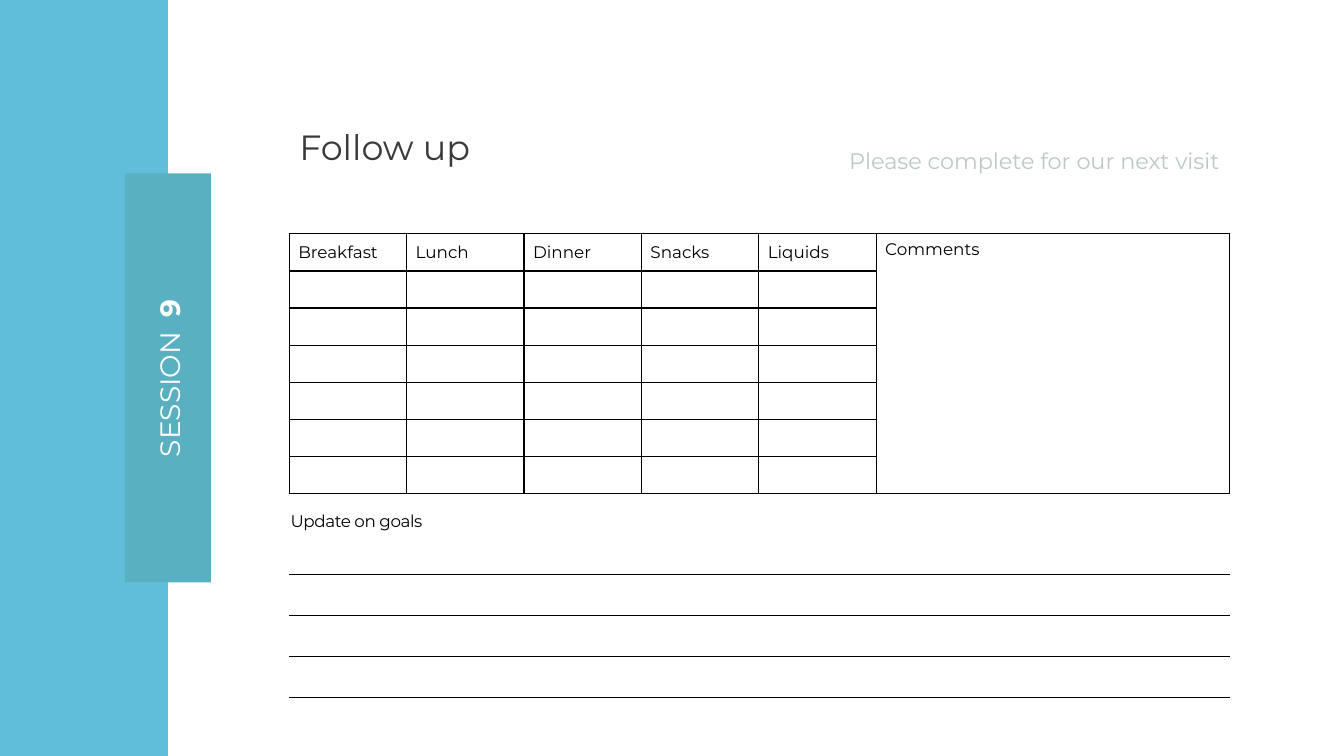
"""Build the session 9 follow-up worksheet slide."""
import pptx
import pptx.dml.color
import pptx.enum.shapes
import pptx.enum.text
import pptx.oxml
import pptx.util

Pt = pptx.util.Pt
ALIGN = pptx.enum.text.PP_ALIGN
ANCHOR = pptx.enum.text.MSO_ANCHOR
NAMESPACE = "http://schemas.openxmlformats.org/drawingml/2006/main"
LEFT, WIDTH = 206.6, 671.8
MEAL_WIDTH, MEAL_ROW, GOAL_ROW = 83.86, 26.54, 29.28


def paint(target, color):
    target.rgb = pptx.dml.color.RGBColor.from_string(color)


def write(frame, text, size, color, align=ALIGN.LEFT):
    frame.text = text
    para = frame.paragraphs[0]
    para.alignment = align
    para.font.size = Pt(size)
    for span in para.runs:
        span.font.name = "Montserrat"
        span.font.size = Pt(size)
        paint(span.font.color, color)
    return para


deck = pptx.Presentation()
deck.slide_width, deck.slide_height = Pt(960), Pt(540)
page = deck.slides.add_slide(deck.slide_layouts[5])

for left, top, width, height, color in [
    (0, 0, 120, 540, "61BEDA"),
    (89.3, 123.8, 61.4, 292.2, "59B0C1"),
]:
    band = page.shapes.add_shape(
        pptx.enum.shapes.MSO_SHAPE.RECTANGLE, Pt(left), Pt(top), Pt(width), Pt(height))
    band.shadow.inherit = False
    band.fill.solid()
    paint(band.fill.fore_color, color)
    band.line.fill.background()

session = page.shapes.add_textbox(Pt(56.9), Pt(254.2), Pt(128.2), Pt(31.7))
session.rotation = 270
session.text_frame.word_wrap = False
para = write(session.text_frame, "SESSION  ", 20, "FFFFFF", ALIGN.CENTER)
number = para.add_run()
number.text = "9"
number.font.name = "Montserrat"
number.font.size = Pt(20)
number.font.bold = True
paint(number.font.color, "FFFFFF")

title = page.shapes.title
title.left, title.top, title.width, title.height = Pt(LEFT), Pt(85.7), Pt(209.5), Pt(37.4)
title.text_frame.auto_size = pptx.enum.text.MSO_AUTO_SIZE.NONE
title.text_frame.vertical_anchor = ANCHOR.TOP
write(title.text_frame, "Follow up", 25, "3B3838")

prompt = page.shapes.add_textbox(Pt(591.1), Pt(85.7), Pt(287.3), Pt(37.4))
prompt.text_frame.word_wrap = True
para = write(prompt.text_frame, "Please complete for our next visit", 16, "BCC8C8", ALIGN.RIGHT)
para.line_spacing = Pt(35)

goals_label = page.shapes.add_textbox(Pt(LEFT), Pt(365), Pt(158.4), Pt(11.5))
frame = goals_label.text_frame
frame.word_wrap = True
frame.margin_left, frame.margin_right, frame.margin_top, frame.margin_bottom = Pt(1), 0, 0, 0
para = write(frame, "Update on goals", 12, "000000")
para.runs[0].font._element.set("spc", "-30")

meals = page.shapes.add_table(7, 6, Pt(LEFT), Pt(167), Pt(WIDTH), Pt(7 * MEAL_ROW)).table
for index, column in enumerate(meals.columns):
    column.width = Pt(MEAL_WIDTH if index < 5 else WIDTH - 5 * MEAL_WIDTH)
goals = page.shapes.add_table(3, 1, Pt(LEFT), Pt(410.2), Pt(WIDTH), Pt(3 * GOAL_ROW)).table

for grid, row_height, sides in [(meals, MEAL_ROW, "LRTB"), (goals, GOAL_ROW, "TB")]:
    grid.first_row = grid.horz_banding = False
    for row in grid.rows:
        row.height = Pt(row_height)
    for cell in grid.iter_cells():
        write(cell.text_frame, "", 12, "000000")
        cell.margin_left, cell.margin_right = Pt(6.5), 0
        cell.margin_top = cell.margin_bottom = 0
        cell.vertical_anchor = ANCHOR.MIDDLE
        properties = cell._tc.get_or_add_tcPr()
        for side in "LRTB":
            ink = '<a:solidFill><a:srgbClr val="000000"/></a:solidFill>' if side in sides else "<a:noFill/>"
            properties.append(pptx.oxml.parse_xml(
                f'<a:ln{side} xmlns:a="{NAMESPACE}" w="{Pt(1)}">{ink}</a:ln{side}>'))
        cell.fill.background()

for index, heading in enumerate(["Breakfast", "Lunch", "Dinner", "Snacks", "Liquids", "Comments"]):
    write(meals.cell(0, index).text_frame, heading, 12, "000000")
comments = meals.cell(0, 5)
comments.merge(meals.cell(6, 5))
comments.vertical_anchor = ANCHOR.TOP
comments.margin_top = Pt(4)

deck.save("out.pptx")
